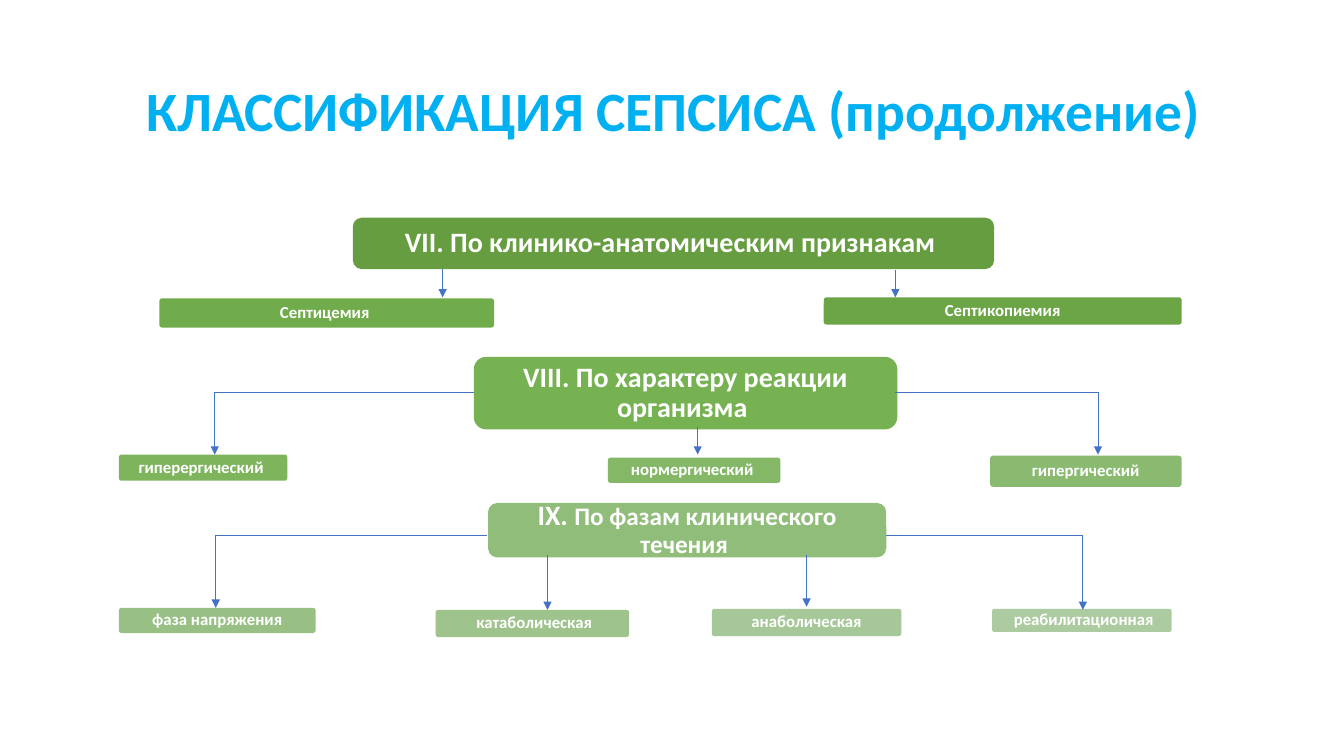
from lxml import etree
from pptx import Presentation
from pptx.dml.color import RGBColor
from pptx.enum.shapes import MSO_CONNECTOR, MSO_SHAPE
from pptx.enum.text import MSO_ANCHOR, PP_ALIGN
from pptx.oxml.ns import qn
from pptx.util import Inches, Pt

COLORS = {"title": "00B0F0", "text": "FFFFFF", "line": "4472C4"}
FONT = "Calibri"

deck = Presentation()
deck.slide_width, deck.slide_height = Inches(13.33), Inches(7.5)
page = deck.slides.add_slide(deck.slide_layouts[6])


def write(box, spans, color, inset):
    """Fill a box with one centred bold paragraph of (text, size) spans."""
    frame = box.text_frame
    layout = {"word_wrap": True, "vertical_anchor": MSO_ANCHOR.MIDDLE,
              "margin_left": Inches(inset), "margin_right": Inches(inset),
              "margin_top": Inches(0.05), "margin_bottom": Inches(0.05)}
    for name, value in layout.items():
        setattr(frame, name, value)
    para = frame.paragraphs[0]
    para.alignment = PP_ALIGN.CENTER
    para.line_spacing = 0.9
    for text, size in spans:
        span = para.add_run()
        span.text = text
        for name, value in {"name": FONT, "size": Pt(size), "bold": True}.items():
            setattr(span.font, name, value)
        span.font.color.rgb = RGBColor.from_string(color)


def connect(x1, y1, x2, y2, arrow):
    """Draw a thin straight line, with an arrowhead at its end if asked."""
    line = page.shapes.add_connector(
        MSO_CONNECTOR.STRAIGHT, Inches(x1), Inches(y1), Inches(x2), Inches(y2))
    line.line.color.rgb = RGBColor.from_string(COLORS["line"])
    line.line.width = Pt(0.5)
    if arrow:
        etree.SubElement(line.line._get_or_add_ln(), qn("a:tailEnd"), type="triangle")
    etree.SubElement(line._element.spPr, qn("a:effectLst"))


# Title
title = page.shapes.add_textbox(Inches(1.18), Inches(0.62), Inches(11), Inches(1.02))
write(title, [("КЛАССИФИКАЦИЯ СЕПСИСА (продолжение)", 39.6)], COLORS["title"], 0.1)

# Criteria and their categories: left, top, width, height, fill, spans
boxes = [
    (3.5, 2.16, 6.36, 0.51, "669D40", [("VII. По клинико-анатомическим признакам ", 20)]),
    (8.17, 2.95, 3.55, 0.27, "6BA546", [("Септикопиемия", 12)]),
    (1.58, 2.96, 3.32, 0.29, "70AC4B", [("Септицемия ", 12)]),
    (4.7, 3.54, 4.2, 0.72, "76B252", [("VIII. По характеру реакции организма ", 20)]),
    (1.18, 4.51, 1.67, 0.26, "7DB45C", [("гиперергический ", 12)]),
    (6.03, 4.54, 1.71, 0.25, "84B766", [("нормергический ", 12)]),
    (9.82, 4.52, 1.9, 0.31, "8ABA70", [("гипергический", 12)]),
    (4.84, 4.99, 3.95, 0.54, "91BD7A",
     [("IX. ", 20), ("По фазам клинического течения ", 18)]),
    (1.18, 6.03, 1.95, 0.25, "98C084", [(" фаза напряжения ", 12)]),
    (4.32, 6.05, 1.92, 0.27, "9FC38D", [(" катаболическая", 12)]),
    (7.06, 6.04, 1.88, 0.27, "A6C797", [("анаболическая", 12)]),
    (9.84, 6.04, 1.78, 0.23, "ADCBA0", [(" реабилитационная", 12)]),
]
for left, top, width, height, fill, spans in boxes:
    box = page.shapes.add_shape(MSO_SHAPE.ROUNDED_RECTANGLE, Inches(left), Inches(top),
                                Inches(width), Inches(height))
    box.adjustments[0] = 0.17 if height > 0.5 else 0.1
    box.shadow.inherit = False
    box.fill.solid()
    box.fill.fore_color.rgb = RGBColor.from_string(fill)
    box.line.fill.background()
    write(box, spans, COLORS["text"], 0.1 if height > 0.5 else 0.06)

# Arrows straight down from a criterion: x, top, bottom
for x, top, bottom in [(4.39, 2.67, 2.95), (8.88, 2.68, 2.95), (6.92, 4.24, 4.51),
                       (5.43, 5.51, 6.05), (8, 5.51, 6.02)]:
    connect(x, top, x, bottom, arrow=True)

# Side branches: out from a criterion, then down to the outer category
for start, x, level, bottom in [(4.7, 2.13, 3.89, 4.51), (8.88, 10.89, 3.89, 4.51),
                                (4.83, 2.14, 5.31, 6.03), (8.79, 10.74, 5.31, 6.05)]:
    connect(start, level, x, level, arrow=False)
    connect(x, level, x, bottom, arrow=True)

deck.save("out.pptx")
